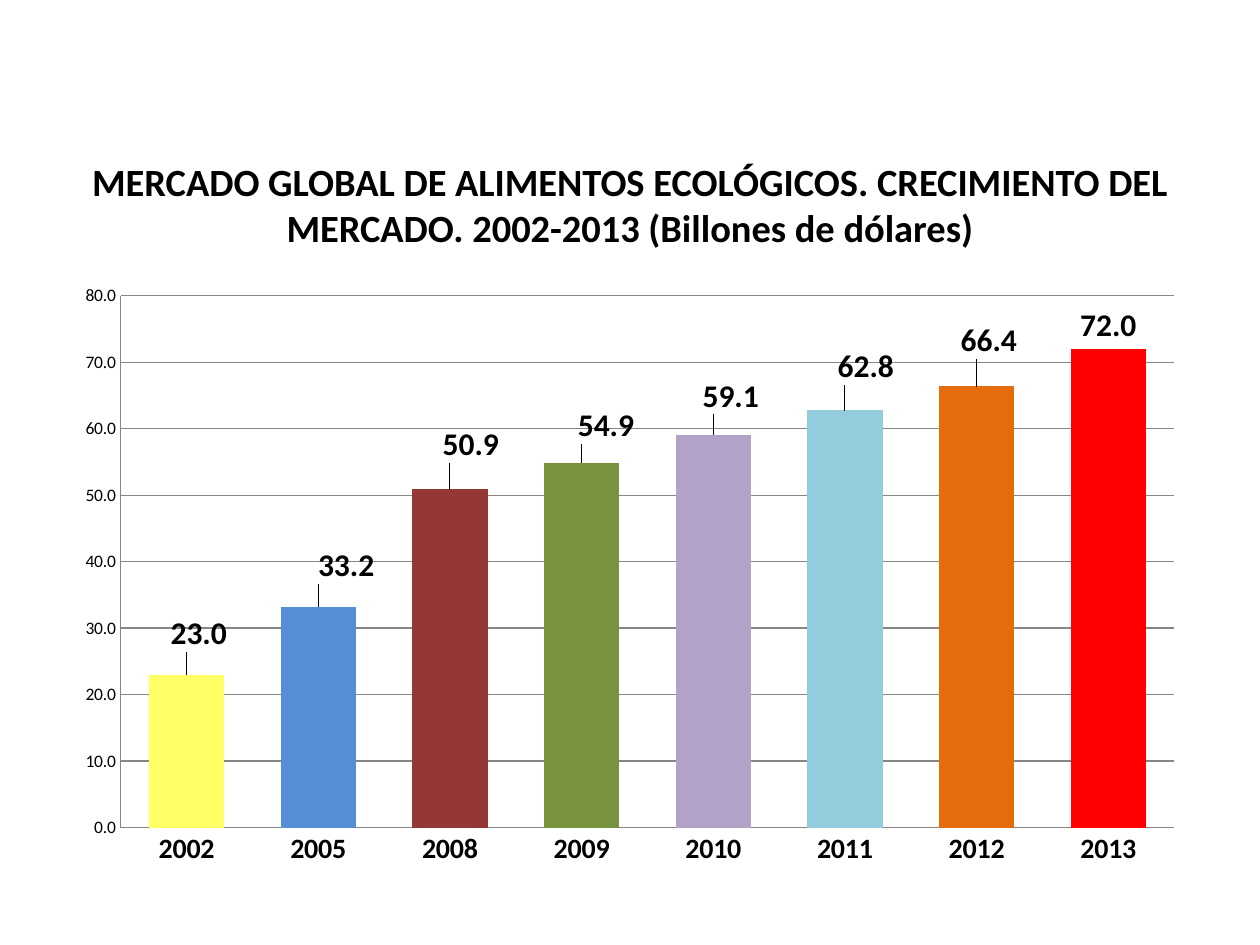
from pptx import Presentation
from pptx.chart.data import CategoryChartData
from pptx.dml.color import RGBColor
from pptx.enum.chart import XL_CHART_TYPE, XL_LABEL_POSITION, XL_TICK_MARK
from pptx.enum.text import MSO_ANCHOR, PP_ALIGN
from pptx.oxml import parse_xml
from pptx.oxml.ns import nsdecls, qn
from pptx.util import Pt

FONT = "Calibri"
TITLE = ("MERCADO GLOBAL DE ALIMENTOS ECOLÓGICOS. CRECIMIENTO DEL "
         "MERCADO. 2002-2013 (Billones de dólares)")
# Year, value, bar colour, label shift right and down in points
BARS = [
    ("2002", 23.0, "FFFF66", (7, -10)),
    ("2005", 33.2, "558ED5", (16, -10)),
    ("2008", 50.9, "953735", (12, -12)),
    ("2009", 54.9, "77933C", (14, -7.5)),
    ("2010", 59.1, "B3A2C7", (10, -8.5)),
    ("2011", 62.8, "93CDDD", (12, -11.5)),
    ("2012", 66.4, "E46C0A", (7, -12.5)),
    ("2013", 72.0, "FF0000", None),
]


def color(value):
    return RGBColor.from_string(value)


def style_font(font, size, bold=False):
    font.name = FONT
    font.size = Pt(size)
    font.bold = bold
    font.color.rgb = color("000000")


def manual_layout(modes="", **fractions):
    """Return a c:layout element; fractions are of the chart's size."""
    values = "".join(f'<c:{key} val="{value:.4f}"/>' for key, value in fractions.items())
    return parse_xml(f'<c:layout {nsdecls("c")}><c:manualLayout>{modes}{values}'
                     '</c:manualLayout></c:layout>')


def place_title(slide, left, top, width, height):
    title = slide.shapes.title
    title.left, title.top, title.width, title.height = map(Pt, (left, top, width, height))
    frame = title.text_frame
    frame.text = TITLE
    frame.word_wrap = True
    frame.vertical_anchor = MSO_ANCHOR.MIDDLE
    paragraph = frame.paragraphs[0]
    paragraph.alignment = PP_ALIGN.CENTER
    style_font(paragraph.font, 22, True)


def format_axes(chart):
    for axis in (chart.category_axis, chart.value_axis):
        axis.major_tick_mark = axis.minor_tick_mark = XL_TICK_MARK.NONE
        axis.format.line.color.rgb = color("868686")
    style_font(chart.category_axis.tick_labels.font, 16, True)
    value_axis = chart.value_axis
    style_font(value_axis.tick_labels.font, 10)
    value_axis.minimum_scale, value_axis.maximum_scale = 0, 80
    value_axis.major_unit = 10
    value_axis.tick_labels.number_format = "0.0"
    value_axis.tick_labels.number_format_is_linked = False
    value_axis.has_major_gridlines = True
    value_axis.major_gridlines.format.line.color.rgb = color("868686")


def format_bars(series, width, height):
    labels = series.data_labels
    labels.show_value = True
    labels.number_format = "0.0"
    labels.number_format_is_linked = False
    labels.position = XL_LABEL_POSITION.OUTSIDE_END
    style_font(labels.font, 18, True)
    for index, (_, _, fill, shift) in enumerate(BARS):
        point = series.points[index]
        point.format.fill.solid()
        point.format.fill.fore_color.rgb = color(fill)
        if shift:
            label = point.data_label
            style_font(label.font, 18, True)
            label.position = XL_LABEL_POSITION.OUTSIDE_END
    shifts = [shift for *_, shift in BARS if shift]
    for element, (right, down) in zip(labels._element.findall(qn("c:dLbl")), shifts):
        element[0].addnext(manual_layout(x=right / width, y=down / height))


def place_chart(slide, left, top, width, height):
    data = CategoryChartData(number_format="0.0")
    data.categories = [year for year, *_ in BARS]
    data.add_series("Series 1", [value for _, value, *_ in BARS])
    chart = slide.shapes.add_chart(XL_CHART_TYPE.COLUMN_CLUSTERED,
                                   *map(Pt, (left, top, width, height)), data).chart
    chart.has_legend = chart.has_title = False
    style_font(chart.font, 10)
    plot = chart.plots[0]
    plot.gap_width = 75
    plot.vary_by_categories = False
    format_axes(chart)
    series = plot.series[0]
    series.format.fill.solid()
    series.format.fill.fore_color.rgb = color("E46C0A")
    format_bars(series, width, height)

    plot_area = chart._chartSpace.chart.plotArea
    for layout in plot_area.findall(qn("c:layout")):
        plot_area.remove(layout)
    modes = '<c:layoutTarget val="inner"/><c:xMode val="edge"/><c:yMode val="edge"/>'
    plot_area.insert(0, manual_layout(modes, x=33 / width, y=12 / height,
                                      w=602 / width, h=304 / height))


def main():
    presentation = Presentation()
    presentation.slide_width, presentation.slide_height = Pt(720), Pt(540)
    slide = presentation.slides.add_slide(presentation.slide_layouts[5])
    place_title(slide, 42.5, 82.8, 635, 67.7)
    place_chart(slide, 36, 157, 648, 345.6)
    presentation.save("out.pptx")


if __name__ == "__main__":
    main()
